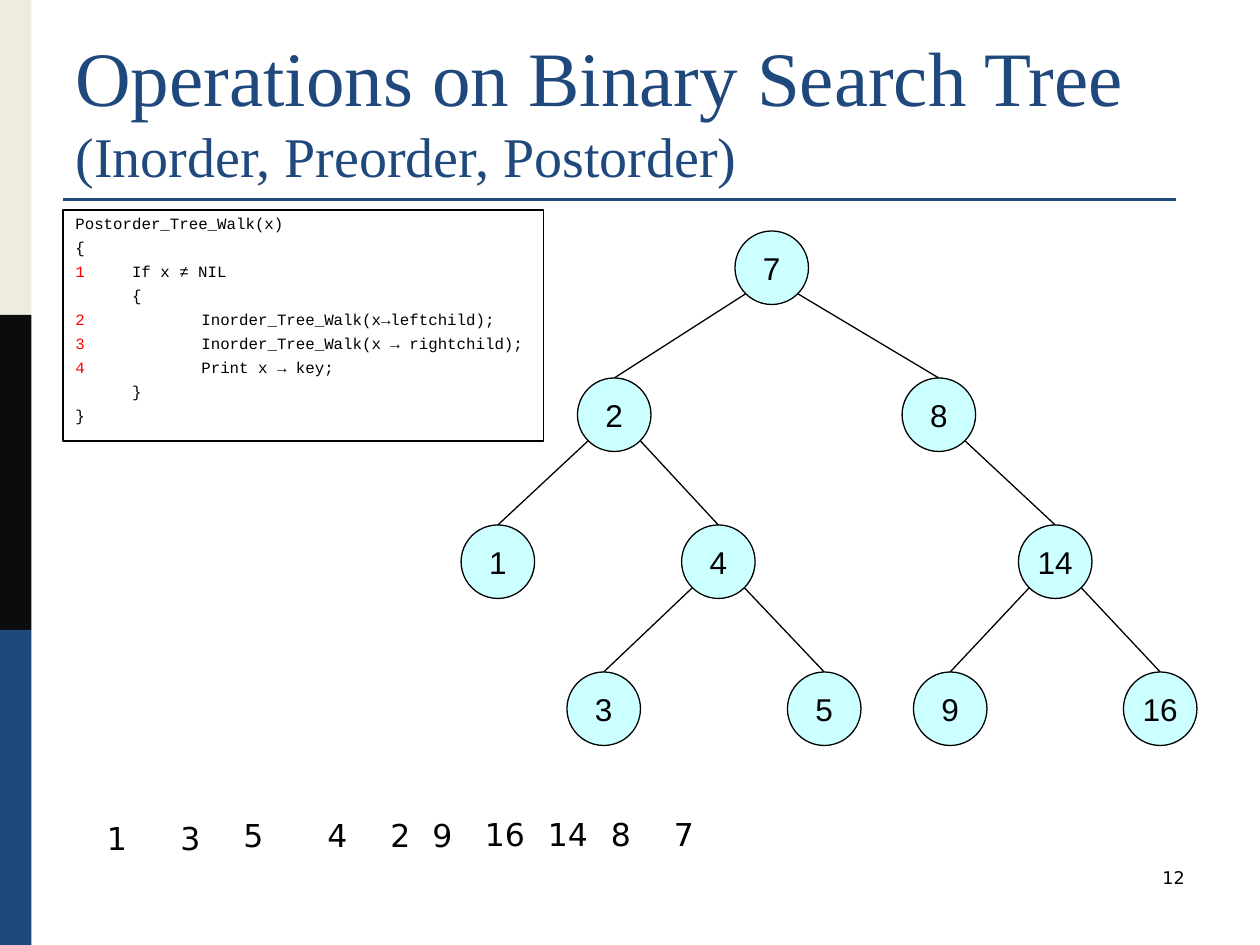
"""Build a slide on the postorder walk of a binary search tree."""
from dataclasses import dataclass
from math import sqrt
from typing import NamedTuple, Optional

from lxml.etree import SubElement
from pptx import Presentation
from pptx.dml.color import RGBColor as Color
from pptx.enum.shapes import MSO_CONNECTOR as Connector, MSO_SHAPE as Preset
from pptx.enum.text import MSO_ANCHOR as Anchor, PP_ALIGN as Align
from pptx.oxml.ns import qn
from pptx.util import Pt


@dataclass(frozen=True)
class Theme:
    """Colours, fonts and type sizes of the slide."""
    navy: str = "1F497D"
    cream: str = "EEECE1"
    charcoal: str = "0C0C0C"
    aqua: str = "CCFFFF"
    black: str = "000000"
    white: str = "FFFFFF"
    red: str = "FF0000"
    title_font: str = "Times New Roman"
    node_font: str = "Arial"
    code_font: str = "Courier New"
    text_font: str = "DejaVu Sans"
    title_size: float = 44
    subtitle_size: float = 32
    key_size: float = 18
    number_size: float = 10
    code_size: float = 9
    thin: float = 0.75
    thick: float = 1.5


class Box(NamedTuple):
    """Left, top, width and height in points."""
    left: float
    top: float
    width: float
    height: float


class Node(NamedTuple):
    """A tree node with its left edge, level and parent key."""
    key: str
    left: float
    level: int
    parent: Optional[str] = None


class Visit(NamedTuple):
    """A key in the walk's output and where it stands."""
    key: str
    left: float
    top: float


class CodeLine(NamedTuple):
    """A line of pseudocode with its step number and tab stop."""
    number: str
    text: str
    tab: float = 0


THEME = Theme()
DIAMETER = 42
TREE_TOP = 132
LEVEL_STEP = 84
BAND_WIDTH, BAND_HEIGHT = 18, 180
BLOCK_TAB, BODY_TAB = 32.4, 72

NODES = [
    Node("7", 420, 0),
    Node("2", 330, 1, "7"), Node("8", 515.5, 1, "7"),
    Node("1", 263.5, 2, "2"), Node("4", 389.5, 2, "2"), Node("14", 582, 2, "8"),
    Node("3", 324, 3, "4"), Node("5", 450, 3, "4"),
    Node("9", 522, 3, "14"), Node("16", 642, 3, "14"),
]
VISITS = [
    Visit("1", 54, 464.4), Visit("3", 96, 464.4), Visit("5", 132, 463),
    Visit("4", 180, 463), Visit("2", 216, 463), Visit("9", 240, 463),
    Visit("16", 270, 462), Visit("14", 306, 462), Visit("8", 342, 462),
    Visit("7", 378, 462),
]
CODE = [
    CodeLine("", "Postorder_Tree_Walk(x)"),
    CodeLine("", "{"),
    CodeLine("1", "If x ≠ NIL", BLOCK_TAB),
    CodeLine("", "{", BLOCK_TAB),
    CodeLine("2", "Inorder_Tree_Walk(x→leftchild);", BODY_TAB),
    CodeLine("3", "Inorder_Tree_Walk(x → rightchild);", BODY_TAB),
    CodeLine("4", "Print x → key;", BODY_TAB),
    CodeLine("", "}", BLOCK_TAB),
    CodeLine("", "}"),
]


def style_run(span, font: str, size: float, color: str) -> None:
    """Set the font, size and colour of a run."""
    span.font.name = font
    span.font.size = Pt(size)
    span.font.color.rgb = Color.from_string(color)


def add_block(page, preset, box: Box, fill: str, line: Optional[str] = None):
    """Add a filled preset shape, outlined if a line colour is given."""
    shape = page.shapes.add_shape(preset, *map(Pt, box))
    shape.shadow.inherit = False
    shape.fill.solid()
    shape.fill.fore_color.rgb = Color.from_string(fill)
    if line:
        shape.line.color.rgb = Color.from_string(line)
        shape.line.width = Pt(THEME.thin)
    else:
        shape.line.fill.background()
    return shape


def add_line(page, start: tuple, end: tuple, color: str, width: float):
    """Add a straight connector without a shadow."""
    line = page.shapes.add_connector(Connector.STRAIGHT, *map(Pt, start + end))
    line.line.color.rgb = Color.from_string(color)
    line.line.width = Pt(width)
    SubElement(line._element.spPr, qn("a:effectLst"))
    return line


def add_label(page, box: Box, text: str, size: float, align=Align.LEFT) -> None:
    """Add a one-line text box."""
    frame = page.shapes.add_textbox(*map(Pt, box)).text_frame
    frame.word_wrap = True
    frame.text = text
    para = frame.paragraphs[0]
    para.alignment = align
    style_run(para.runs[0], THEME.text_font, size, THEME.black)


def add_title(page) -> None:
    """Add the two-line title and the rule below it."""
    frame = page.shapes.add_textbox(*map(Pt, Box(36, 21.6, 648, 90))).text_frame
    frame.word_wrap = True
    frame.vertical_anchor = Anchor.BOTTOM
    para = frame.paragraphs[0]
    para.text = "Operations on Binary Search Tree\v(Inorder, Preorder, Postorder)"
    for span, size in zip(para.runs, (THEME.title_size, THEME.subtitle_size)):
        style_run(span, THEME.title_font, size, THEME.navy)
    add_line(page, (36, 114), (672, 114), THEME.navy, THEME.thick)


def add_node(page, node: Node):
    """Add a circle holding the node's key."""
    box = Box(node.left, TREE_TOP + node.level * LEVEL_STEP, DIAMETER, DIAMETER)
    circle = add_block(page, Preset.OVAL, box, THEME.aqua, THEME.black)
    frame = circle.text_frame
    frame.word_wrap = False
    frame.vertical_anchor = Anchor.MIDDLE
    frame.text = node.key
    para = frame.paragraphs[0]
    para.alignment = Align.CENTER
    style_run(para.runs[0], THEME.node_font, THEME.key_size, THEME.black)
    return circle


def add_tree(page, nodes: list[Node]) -> None:
    """Add all nodes and join each one to its parent."""
    circles = {node.key: add_node(page, node) for node in nodes}
    by_key = {node.key: node for node in nodes}
    radius = DIAMETER / 2
    reach = radius / sqrt(2)
    for node in nodes:
        if node.parent is None:
            continue
        parent = by_key[node.parent]
        side = reach if node.left > parent.left else -reach
        parent_middle = TREE_TOP + parent.level * LEVEL_STEP + radius
        start = (parent.left + radius + side, parent_middle + reach)
        end = (node.left + radius, TREE_TOP + node.level * LEVEL_STEP)
        edge = add_line(page, start, end, THEME.black, THEME.thin)
        edge.end_connect(circles[node.key], 0)


def add_code(page, lines: list[CodeLine]) -> None:
    """Add the framed pseudocode with red step numbers."""
    box = Box(36, 120, 274.5, 132)
    frame = add_block(page, Preset.RECTANGLE, box, THEME.white, THEME.black).text_frame
    frame.word_wrap = True
    frame.vertical_anchor = Anchor.TOP
    for index, line in enumerate(lines):
        para = frame.paragraphs[0] if index == 0 else frame.add_paragraph()
        para.alignment = Align.LEFT
        para.line_spacing = 0.9
        para.space_before = Pt(3.9)
        if line.tab:
            stops = SubElement(para._p.get_or_add_pPr(), qn("a:tabLst"))
            SubElement(stops, qn("a:tab"), pos=str(Pt(line.tab)), algn="l")
        gap = "\t" if line.tab else ""
        for text, color in ((line.number, THEME.red), (gap + line.text, THEME.black)):
            if text:
                span = para.add_run()
                span.text = text
                style_run(span, THEME.code_font, THEME.code_size, color)


def main() -> None:
    """Build and save the deck."""
    deck = Presentation()
    deck.slide_width, deck.slide_height = Pt(720), Pt(540)
    page = deck.slides.add_slide(deck.slide_layouts[6])
    for index, color in enumerate((THEME.cream, THEME.charcoal, THEME.navy)):
        band = Box(0, index * BAND_HEIGHT, BAND_WIDTH, BAND_HEIGHT)
        add_block(page, Preset.RECTANGLE, band, color)
    add_title(page)
    add_label(page, Box(516, 492, 168, 36), "12", THEME.number_size, Align.RIGHT)
    add_tree(page, NODES)
    for visit in VISITS:
        add_label(page, Box(visit.left, visit.top, 48, 29), visit.key, THEME.key_size)
    add_code(page, CODE)
    deck.save("out.pptx")


if __name__ == "__main__":
    main()
